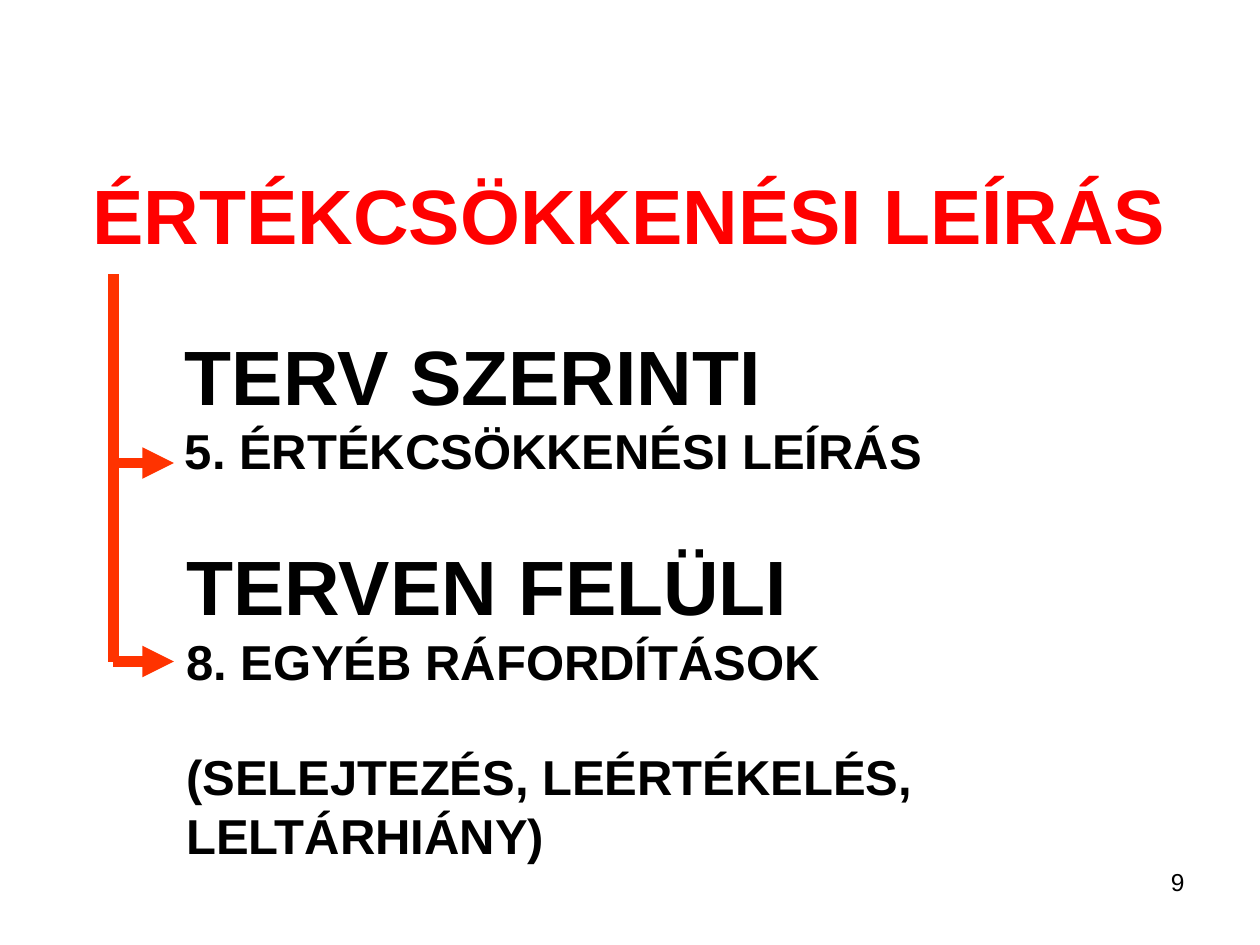
from dataclasses import dataclass

from lxml.etree import SubElement
from pptx import Presentation
from pptx.dml.color import RGBColor
from pptx.enum.shapes import MSO_CONNECTOR
from pptx.enum.text import MSO_ANCHOR, MSO_AUTO_SIZE, PP_ALIGN
from pptx.oxml.ns import qn
from pptx.slide import Slide
from pptx.text.text import TextFrame, _Paragraph as Paragraph
from pptx.util import Inches, Pt


@dataclass(frozen=True)
class Theme:
    font: str = "Arial"
    heading: RGBColor = RGBColor(0xFF, 0x00, 0x00)
    text: RGBColor = RGBColor(0x00, 0x00, 0x00)
    branch: RGBColor = RGBColor(0xFF, 0x33, 0x00)
    heading_size: int = 44
    detail_size: int = 28
    number_size: int = 14
    branch_width: int = 6


@dataclass(frozen=True)
class Box:
    """Position and size as shares of the slide."""
    left: float
    top: float
    width: float
    height: float


@dataclass(frozen=True)
class Category:
    name: str
    account: str
    box: Box
    arrow_y: float
    note: str = ""


THEME = Theme()
WIDTH, HEIGHT = Inches(10), Inches(7.5)
ROW = 1 / 6  # share of the slide's height given to a heading block
TRUNK_X, TRUNK_TOP, ARROW_X = 0.09, 0.29, 0.138

TITLE_BOX = Box(0.05, 0.143, 0.9, ROW)
NUMBER_BOX = Box(0.717, 0.911, 0.233, 0.07)
CATEGORIES = [
    Category("TERV SZERINTI", "5. ÉRTÉKCSÖKKENÉSI LEÍRÁS",
             Box(0.137, 0.344, 0.804, ROW), 0.49),
    Category("TERVEN FELÜLI", "8. EGYÉB RÁFORDÍTÁSOK",
             Box(0.138, 0.659, 0.843, ROW), 0.7,
             "(SELEJTEZÉS, LEÉRTÉKELÉS, LELTÁRHIÁNY)"),
]


def across(share: float) -> int:
    return round(WIDTH * share)


def down(share: float) -> int:
    return round(HEIGHT * share)


def extent(box: Box) -> tuple[int, int, int, int]:
    return across(box.left), down(box.top), across(box.width), down(box.height)


def format_runs(paragraph: Paragraph, *sizes: int,
                color: RGBColor = THEME.text, bold: bool = True) -> None:
    for run, size in zip(paragraph.runs, sizes):
        run.font.name = THEME.font
        run.font.size = Pt(size)
        run.font.bold = bold
        run.font.color.rgb = color


def add_text(slide: Slide, box: Box, anchor: MSO_ANCHOR) -> TextFrame:
    frame = slide.shapes.add_textbox(*extent(box)).text_frame
    frame.word_wrap = True
    frame.vertical_anchor = anchor
    return frame


def set_title(slide: Slide, wording: str) -> None:
    title = slide.shapes.title
    title.left, title.top, title.width, title.height = extent(TITLE_BOX)
    frame = title.text_frame
    frame.text = wording
    frame.auto_size = MSO_AUTO_SIZE.NONE
    frame.vertical_anchor = MSO_ANCHOR.MIDDLE
    heading = frame.paragraphs[0]
    heading.alignment = PP_ALIGN.CENTER
    format_runs(heading, THEME.heading_size, color=THEME.heading)


def add_category(slide: Slide, category: Category) -> None:
    frame = add_text(slide, category.box, MSO_ANCHOR.MIDDLE)
    heading = frame.paragraphs[0]
    heading.text = f"{category.name}\n{category.account}"
    format_runs(heading, THEME.heading_size, THEME.detail_size)
    if category.note:
        note = frame.add_paragraph()
        note.text = category.note
        note.space_before = Pt(1.15 * THEME.detail_size)  # one line of text
        format_runs(note, THEME.detail_size)


def add_branch(slide: Slide, start: tuple[float, float],
               end: tuple[float, float], arrow: bool = False) -> None:
    branch = slide.shapes.add_connector(
        MSO_CONNECTOR.STRAIGHT, across(start[0]), down(start[1]),
        across(end[0]), down(end[1]))
    branch.line.color.rgb = THEME.branch
    branch.line.width = Pt(THEME.branch_width)
    if arrow:
        SubElement(branch.line._get_or_add_ln(), qn("a:tailEnd"), type="triangle")
    SubElement(branch._element.spPr, qn("a:effectLst"))


def add_slide_number(slide: Slide, number: int) -> None:
    label = add_text(slide, NUMBER_BOX, MSO_ANCHOR.TOP).paragraphs[0]
    label.text = str(number)
    label.alignment = PP_ALIGN.RIGHT
    format_runs(label, THEME.number_size, bold=False)


def main() -> None:
    deck = Presentation()
    deck.slide_width, deck.slide_height = WIDTH, HEIGHT
    slide = deck.slides.add_slide(deck.slide_layouts.get_by_name("Title Only"))

    add_slide_number(slide, 9)
    set_title(slide, "ÉRTÉKCSÖKKENÉSI LEÍRÁS")
    for category in CATEGORIES:
        add_category(slide, category)
    add_branch(slide, (TRUNK_X, TRUNK_TOP), (TRUNK_X, CATEGORIES[-1].arrow_y))
    for category in CATEGORIES:
        add_branch(slide, (TRUNK_X, category.arrow_y),
                   (ARROW_X, category.arrow_y), arrow=True)

    deck.save("out.pptx")


if __name__ == "__main__":
    main()
